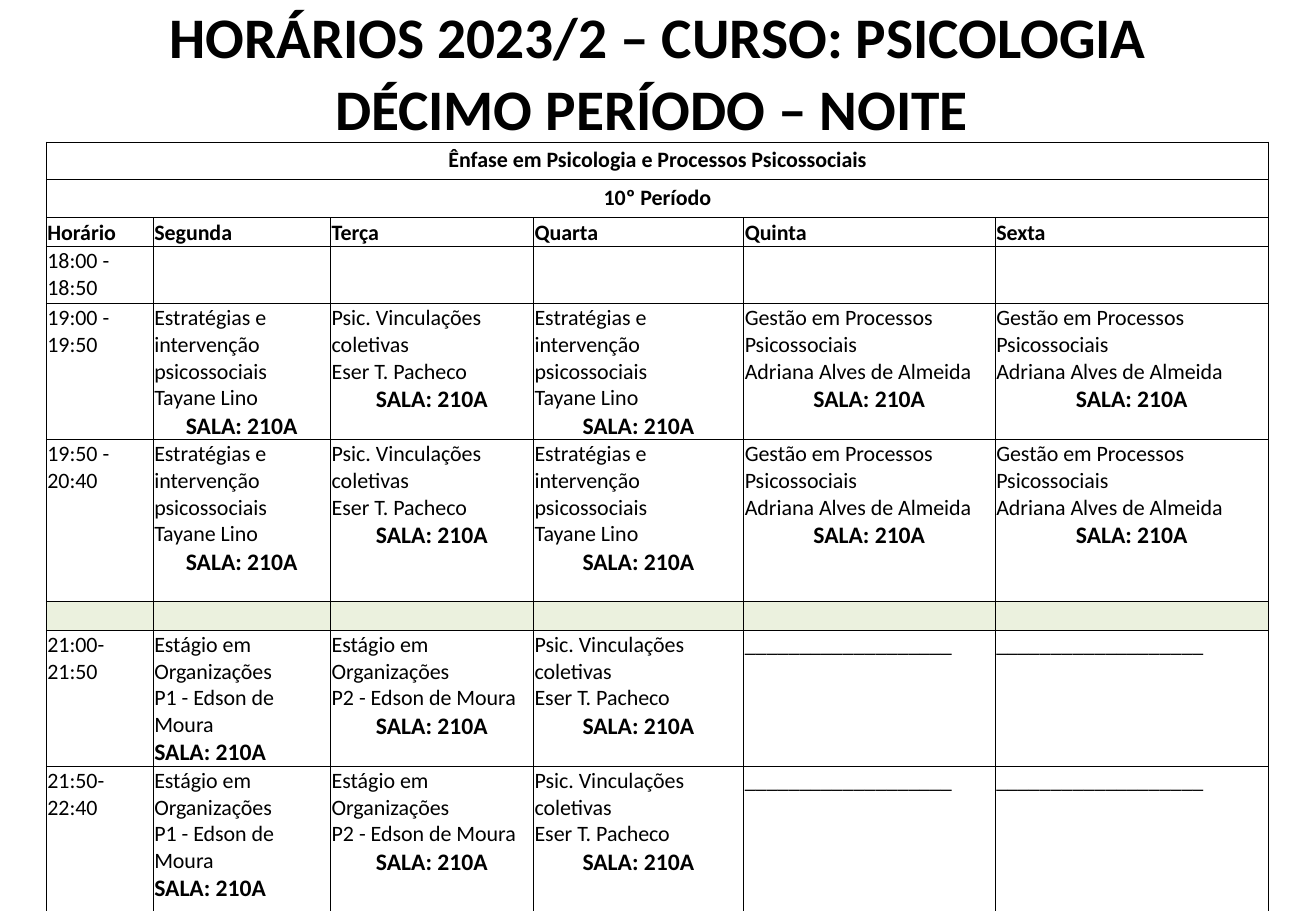
from dataclasses import dataclass

from lxml import etree
from pptx import Presentation
from pptx import util as u
from pptx.dml.color import RGBColor
from pptx.enum import text as t
from pptx.oxml.ns import qn

FONT = "Calibri"
BLACK = "000000"
BREAK_GREEN = "EBF1DE"
BODY_SIZE = 13
ROOM = "SALA: 210A"
LEFT, CENTER = t.PP_ALIGN.LEFT, t.PP_ALIGN.CENTER
TOP, MIDDLE, BOTTOM = t.MSO_ANCHOR.TOP, t.MSO_ANCHOR.MIDDLE, t.MSO_ANCHOR.BOTTOM
DAY_WIDTHS = (0.88, 1.46, 1.67, 1.73, 2.07, 2.25)


@dataclass(frozen=True)
class Lesson:
    subject: str = ""
    room: str = ""
    room_align: t.PP_ALIGN = CENTER


@dataclass(frozen=True)
class Period:
    height: float
    lessons: tuple[Lesson, ...]
    bold: bool = False
    align: t.PP_ALIGN = LEFT
    anchor: t.MSO_ANCHOR = TOP
    fill: str = ""
    merged: bool = False


STRATEGIES = Lesson("Estratégias e intervenção psicossociais\nTayane Lino", ROOM)
BONDS = Lesson("Psic. Vinculações coletivas\nEser T. Pacheco", ROOM)
MANAGEMENT = Lesson("Gestão em Processos Psicossociais\nAdriana Alves de Almeida", ROOM)
INTERNSHIP_1 = Lesson("Estágio em Organizações \nP1 - Edson de Moura", ROOM, LEFT)
INTERNSHIP_2 = Lesson("Estágio em Organizações \nP2 - Edson de Moura", ROOM)
VACANT = Lesson("_" * 19)
EMPTY = Lesson()

EARLY = (STRATEGIES, BONDS, STRATEGIES, MANAGEMENT, MANAGEMENT)
LATE = (INTERNSHIP_1, INTERNSHIP_2, BONDS, VACANT, VACANT)
DAYS = ("Horário", "Segunda", "Terça", "Quarta", "Quinta", "Sexta")


def heading(caption: str) -> Period:
    return Period(0.31, (Lesson(caption),), bold=True, align=CENTER, merged=True)


TIMETABLE = (
    heading("Ênfase em Psicologia e Processos Psicossociais"),
    heading("10º Período"),
    Period(0.24, tuple(map(Lesson, DAYS)), bold=True, anchor=BOTTOM),
    Period(0.47, (Lesson("18:00 - 18:50"), *[EMPTY] * 5)),
    Period(1.12, (Lesson("19:00 - 19:50"), *EARLY)),
    Period(1.33, (Lesson("19:50 - 20:40"), *EARLY)),
    Period(0.24, (EMPTY,) * 6, fill=BREAK_GREEN),
    Period(1.12, (Lesson("21:00-21:50"), *LATE)),
    Period(1.3, (Lesson("21:50-22:40"), *LATE)),
)


def color(value: str) -> RGBColor:
    return RGBColor.from_string(value)


def write(paragraph, words: str, *, size: float = BODY_SIZE, bold: bool = False,
          align: t.PP_ALIGN = LEFT) -> None:
    paragraph.text = words.replace("\n", "\v")
    paragraph.alignment = align
    for run in paragraph.runs:
        run.font.name = FONT
        run.font.size = u.Pt(size)
        run.font.bold = bold
        run.font.color.rgb = color(BLACK)
    for line_break in paragraph._p.findall(qn("a:br")):
        etree.SubElement(line_break, qn("a:rPr"), sz=str(size * 100))
    if not words:
        etree.SubElement(paragraph._p, qn("a:endParaRPr"), sz=str(size * 100))


def draw_borders(cell) -> None:
    properties = cell._tc.get_or_add_tcPr()
    for side in ("lnL", "lnR", "lnT", "lnB"):
        line = etree.SubElement(properties, qn(f"a:{side}"), w=str(u.Pt(0.5)))
        fill = etree.SubElement(line, qn("a:solidFill"))
        etree.SubElement(fill, qn("a:srgbClr"), val=BLACK)


def format_cell(cell, period: Period) -> None:
    side, top, bottom = (0.07, 0.04, 0.04) if period.merged else (0.01, 0.01, 0)
    cell.margin_left = cell.margin_right = u.Inches(side)
    cell.margin_top, cell.margin_bottom = u.Inches(top), u.Inches(bottom)
    cell.vertical_anchor = period.anchor
    draw_borders(cell)
    if period.fill:
        cell.fill.solid()
        cell.fill.fore_color.rgb = color(period.fill)
    else:
        cell.fill.background()


def fill_lesson(cell, lesson: Lesson, period: Period) -> None:
    frame = cell.text_frame
    write(frame.paragraphs[0], lesson.subject, bold=period.bold, align=period.align)
    if lesson.room:
        write(frame.add_paragraph(), lesson.room, size=14, bold=True,
              align=lesson.room_align)


def draw_title(slide) -> None:
    title = slide.shapes.add_textbox(*map(u.Inches, (0.54, 0, 9.75, 1.25)))
    frame = title.text_frame
    frame.word_wrap = True
    frame.vertical_anchor = MIDDLE
    second = frame.add_paragraph()
    write(frame.paragraphs[0], "HORÁRIOS 2023/2 – CURSO: PSICOLOGIA",
          size=34, bold=True, align=CENTER)
    write(second, "DÉCIMO PERÍODO – NOITE ", size=34, bold=True, align=CENTER)
    for paragraph in frame.paragraphs:
        paragraph.line_spacing = 0.9
        paragraph.space_after = u.Pt(6)


def draw_timetable(slide) -> None:
    height = sum(period.height for period in TIMETABLE)
    table = slide.shapes.add_table(
        len(TIMETABLE), len(DAY_WIDTHS),
        *map(u.Inches, (0.38, 1.17, sum(DAY_WIDTHS), height))).table
    table.first_row = table.horz_banding = False
    for column, width in zip(table.columns, DAY_WIDTHS):
        column.width = u.Inches(width)
    for index, period in enumerate(TIMETABLE):
        row = table.rows[index]
        row.height = u.Inches(period.height)
        for cell in row.cells:
            format_cell(cell, period)
        if period.merged:
            table.cell(index, 0).merge(table.cell(index, len(DAY_WIDTHS) - 1))
        for cell, lesson in zip(row.cells, period.lessons):
            fill_lesson(cell, lesson, period)


def main() -> None:
    deck = Presentation()
    deck.slide_width, deck.slide_height = u.Inches(10.83), u.Inches(7.5)
    slide = deck.slides.add_slide(deck.slide_layouts[6])
    draw_title(slide)
    draw_timetable(slide)
    deck.save("out.pptx")


if __name__ == "__main__":
    main()
